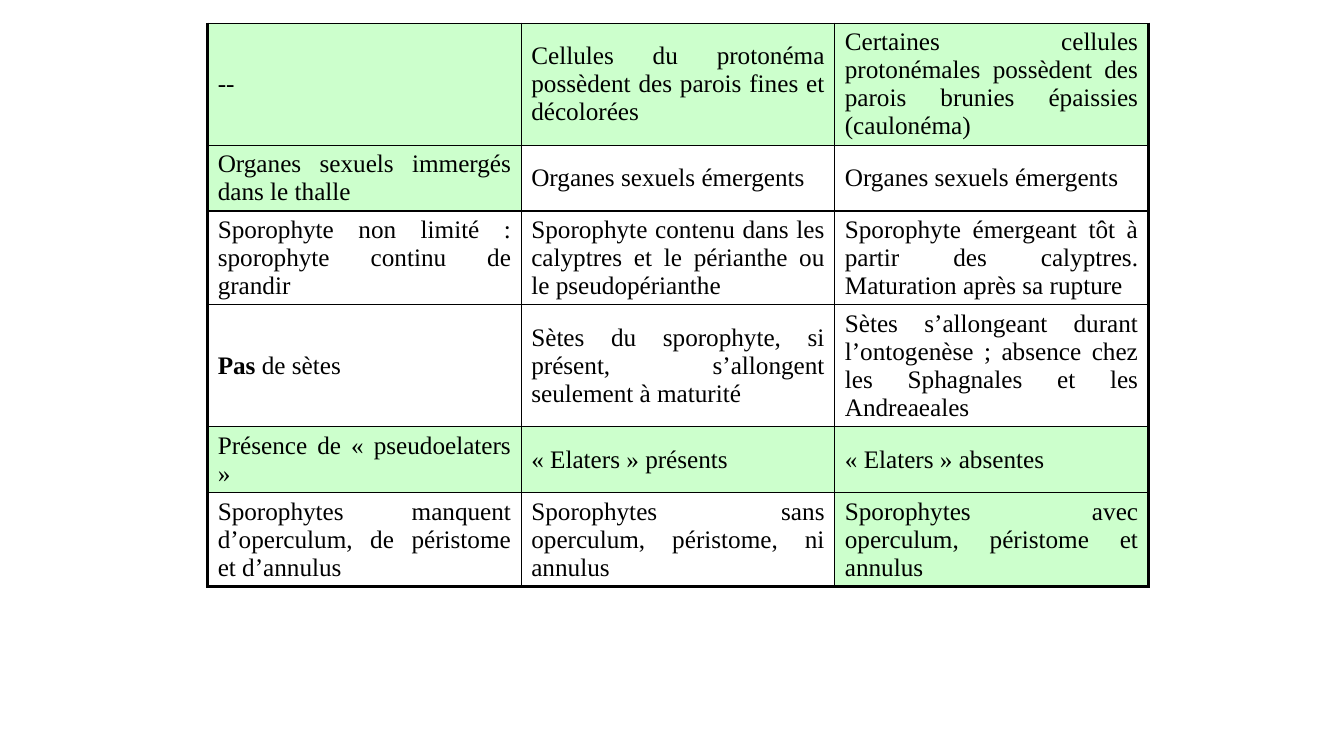
from dataclasses import dataclass

from lxml.etree import SubElement
from pptx import Presentation
from pptx.dml.color import RGBColor
from pptx.enum.text import MSO_ANCHOR, PP_ALIGN
from pptx.oxml.ns import qn
from pptx.table import _Cell
from pptx.util import Inches, Pt

BLACK = RGBColor(0x00, 0x00, 0x00)
GREEN = RGBColor(0xCC, 0xFF, 0xCC)
THIN = Pt(1)
THICK = Pt(2.25)
COLUMN_WIDTH = 3.11


@dataclass
class Trait:
    text: str
    shaded: bool = False
    bold_lead: str = ""


@dataclass
class TraitRow:
    height: float
    traits: list[Trait]


ROWS = [
    TraitRow(1.21, [
        Trait("--", True),
        Trait("Cellules du protonéma possèdent des parois fines et décolorées", True),
        Trait("Certaines cellules protonémales possèdent des parois brunies épaissies (caulonéma)", True),
    ]),
    TraitRow(0.65, [
        Trait("Organes sexuels immergés dans le thalle", True),
        Trait("Organes sexuels émergents"),
        Trait("Organes sexuels émergents"),
    ]),
    TraitRow(0.93, [
        Trait("Sporophyte non limité : sporophyte continu de grandir"),
        Trait("Sporophyte contenu dans les calyptres et le périanthe ou le pseudopérianthe"),
        Trait("Sporophyte émergeant tôt à partir des calyptres. Maturation après sa rupture"),
    ]),
    TraitRow(1.21, [
        Trait(" de sètes", bold_lead="Pas"),
        Trait("Sètes du sporophyte, si présent, s’allongent seulement à maturité"),
        Trait("Sètes s’allongeant durant l’ontogenèse ; absence chez les Sphagnales et les Andreaeales"),
    ]),
    TraitRow(0.65, [
        Trait("Présence de « pseudoelaters »", True),
        Trait("« Elaters » présents", True),
        Trait("« Elaters » absentes", True),
    ]),
    TraitRow(0.93, [
        Trait("Sporophytes manquent d’operculum, de péristome et d’annulus"),
        Trait("Sporophytes sans operculum, péristome, ni annulus"),
        Trait("Sporophytes avec operculum, péristome et annulus", True),
    ]),
]


def write_trait(cell: _Cell, trait: Trait) -> None:
    cell.vertical_anchor = MSO_ANCHOR.MIDDLE
    para = cell.text_frame.paragraphs[0]
    para.alignment = PP_ALIGN.JUSTIFY
    para.font.name = "Times New Roman"
    para.font.size = Pt(18)
    para.font.color.rgb = BLACK
    if trait.bold_lead:
        lead = para.add_run()
        lead.text = trait.bold_lead
        lead.font.bold = True
    para.add_run().text = trait.text


def draw_borders(cell: _Cell, widths: dict[str, int]) -> None:
    properties = cell._tc.get_or_add_tcPr()
    for side, width in widths.items():
        line = SubElement(properties, qn(f"a:{side}"), w=str(width))
        fill = SubElement(line, qn("a:solidFill"))
        SubElement(fill, qn("a:srgbClr"), val=str(BLACK))


def fill_cell(cell: _Cell, shaded: bool) -> None:
    if shaded:
        cell.fill.solid()
        cell.fill.fore_color.rgb = GREEN
    else:
        cell.fill.background()


def main() -> None:
    deck = Presentation()
    deck.slide_width = Inches(13.33)
    deck.slide_height = Inches(7.5)
    page = deck.slides.add_slide(deck.slide_layouts[6])

    column_count = len(ROWS[0].traits)
    table = page.shapes.add_table(
        len(ROWS), column_count, Inches(2.06), Inches(0.23),
        Inches(COLUMN_WIDTH * column_count),
        Inches(sum(row.height for row in ROWS)),
    ).table
    table.first_row = False
    table.horz_banding = False
    for column in table.columns:
        column.width = Inches(COLUMN_WIDTH)

    for row_index, row in enumerate(ROWS):
        table.rows[row_index].height = Inches(row.height)
        for column_index, trait in enumerate(row.traits):
            cell = table.cell(row_index, column_index)
            write_trait(cell, trait)
            draw_borders(cell, {
                "lnL": THICK if column_index == 0 else THIN,
                "lnR": THICK if column_index == column_count - 1 else THIN,
                "lnT": THIN,
                "lnB": THICK if row_index == len(ROWS) - 1 else THIN,
            })
            fill_cell(cell, trait.shaded)

    deck.save("out.pptx")


if __name__ == "__main__":
    main()
